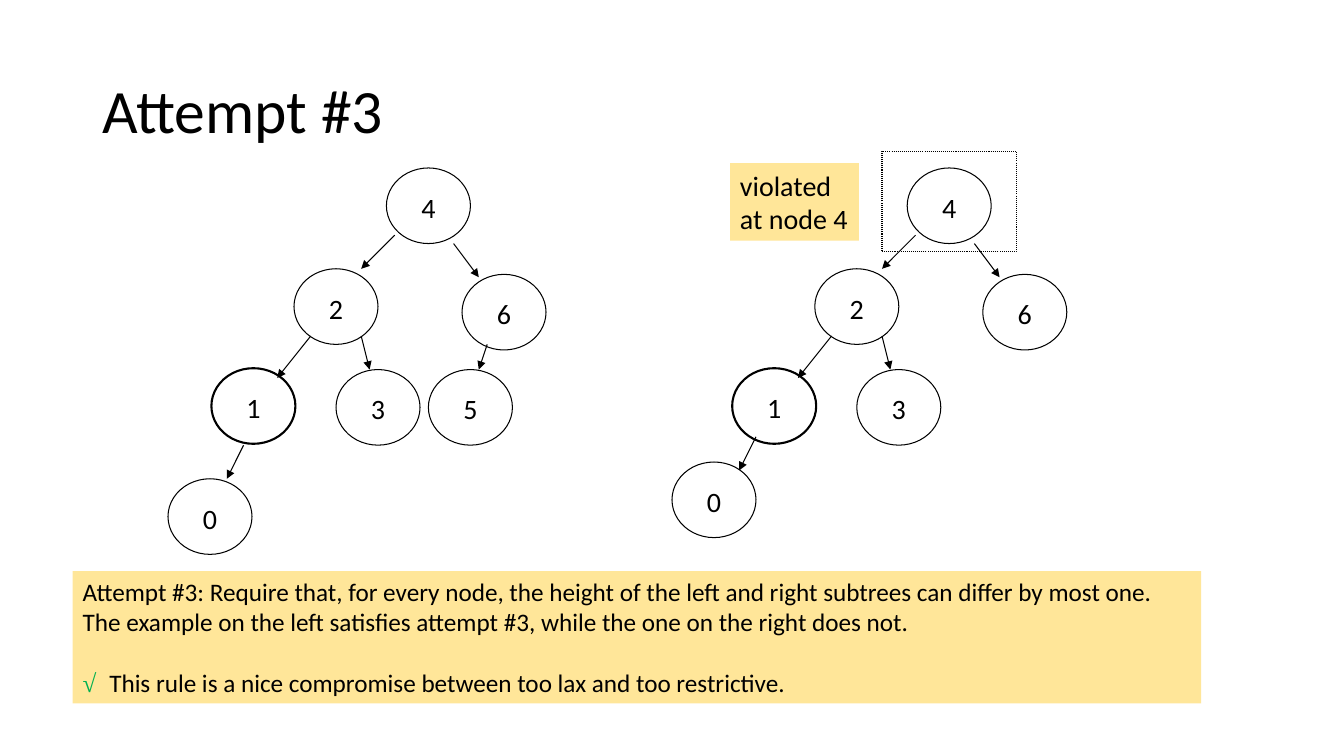
from lxml import etree
from pptx import Presentation
from pptx.dml.color import RGBColor
from pptx.enum.dml import MSO_LINE_DASH_STYLE as DASH
from pptx.enum.shapes import MSO_CONNECTOR, MSO_SHAPE as SHAPE
from pptx.enum.text import MSO_ANCHOR as ANCHOR, PP_ALIGN as ALIGN
from pptx.oxml.ns import qn
from pptx.util import Pt

BLACK, GREEN, YELLOW = "000000", "00B050", "FFE699"
NODE_W, NODE_H = 60, 54

SHARED_NODES = [
    ("4", 156, 0, 0.75),
    ("2", 90, 72, 0.75),
    ("6", 210, 76, 0.75),
    ("1", 31, 143, 1.5),
    ("3", 120, 144, 0.75),
]
SHARED_EDGES = [
    (162, 48, 138, 72),
    (204, 54, 222, 78),
    (102, 120, 78, 150),
    (138, 120, 144, 144),
]
LEFT_NODES = [("5", 186, 144, 0.75), ("0", 0, 222, 0.75)]
LEFT_EDGES = [(228, 126, 222, 144), (54, 198, 42, 222)]
RIGHT_NODES = [("0", -12, 210, 0.75)]
RIGHT_EDGES = [(48, 192, 36, 216)]


def rgb(color):
    """Turn a hex string into a colour."""
    return RGBColor.from_string(color)


def add_run(p, text, size, color=BLACK, font="Calibri"):
    """Append one formatted run to a paragraph."""
    r = p.add_run()
    r.text = text
    r.font.size = Pt(size)
    r.font.name = font
    r.font.color.rgb = rgb(color)


def add_box(s, kind, x, y, w, h, fill=None, line=None, width=0.75):
    """Draw a preset shape with optional fill and outline."""
    sp = s.shapes.add_shape(kind, Pt(x), Pt(y), Pt(w), Pt(h))
    sp.shadow.inherit = False
    if fill:
        sp.fill.solid()
        sp.fill.fore_color.rgb = rgb(fill)
    else:
        sp.fill.background()
    if line:
        sp.line.color.rgb = rgb(line)
        sp.line.width = Pt(width)
    else:
        sp.line.fill.background()
    return sp


def add_arrow(s, x1, y1, x2, y2):
    """Draw a thin black arrow."""
    line = s.shapes.add_connector(MSO_CONNECTOR.STRAIGHT, Pt(x1), Pt(y1), Pt(x2), Pt(y2))
    line.line.color.rgb = rgb(BLACK)
    line.line.width = Pt(0.75)
    etree.SubElement(line.line._get_or_add_ln(), qn("a:tailEnd"), type="triangle")
    etree.SubElement(line._element.spPr, qn("a:effectLst"))


def add_title(s, x, y, w, h):
    """Place the slide title."""
    tf = s.shapes.add_textbox(Pt(x), Pt(y), Pt(w), Pt(h)).text_frame
    tf.word_wrap = True
    tf.vertical_anchor = ANCHOR.MIDDLE
    p = tf.paragraphs[0]
    p.line_spacing = 0.9
    add_run(p, "Attempt #3", 44)


def add_tree(s, x, y, nodes, edges):
    """Draw a binary tree whose parts are offset from (x, y)."""
    for label, dx, dy, width in nodes:
        sp = add_box(s, SHAPE.OVAL, x + dx, y + dy, NODE_W, NODE_H, line=BLACK, width=width)
        tf = sp.text_frame
        tf.word_wrap = False
        tf.vertical_anchor = ANCHOR.MIDDLE
        tf.margin_top, tf.margin_bottom = Pt(2), Pt(0)
        p = tf.paragraphs[0]
        p.alignment = ALIGN.CENTER
        add_run(p, label, 20)
    for x1, y1, x2, y2 in edges:
        add_arrow(s, x + x1, y + y1, x + x2, y + y2)


def add_violation(s, x, y):
    """Frame the violating root and label it."""
    frame = add_box(s, SHAPE.RECTANGLE, x + 108.5, y - 8.5, 96, 72, line=BLACK)
    frame.line.dash_style = DASH.ROUND_DOT
    tf = add_box(s, SHAPE.RECTANGLE, x, y, 92, 55.5, fill=YELLOW).text_frame
    tf.word_wrap = False
    tf.vertical_anchor = ANCHOR.TOP
    for p, text in ((tf.paragraphs[0], "violated"), (tf.add_paragraph(), "at node 4")):
        p.alignment = ALIGN.LEFT
        add_run(p, text, 20)


def add_note(s, x, y, w, h):
    """Place the explanation of the rule."""
    tf = add_box(s, SHAPE.RECTANGLE, x, y, w, h, fill=YELLOW).text_frame
    tf.word_wrap = True
    tf.vertical_anchor = ANCHOR.TOP
    p = tf.paragraphs[0]
    p.alignment = ALIGN.LEFT
    add_run(p, "Attempt #3: Require that, for every node, the height of the left and right "
               "subtrees can differ by most one. The example on the left satisfies "
               "attempt #3, while the one on the right does not.", 18)
    p = tf.add_paragraph()
    p.alignment = ALIGN.LEFT
    p.space_before = Pt(22)
    pPr = p._p.get_or_add_pPr()
    pPr.set("marL", str(Pt(19)))
    pPr.set("indent", str(Pt(-19)))
    tabs = etree.SubElement(pPr, qn("a:tabLst"))
    etree.SubElement(tabs, qn("a:tab"), pos=str(Pt(19)), algn="l")
    add_run(p, "√\t", 18, GREEN, "Times New Roman")
    add_run(p, "This rule is a nice compromise between too lax and too restrictive.", 18)


def main():
    """Build and save the slide."""
    prs = Presentation()
    prs.slide_width, prs.slide_height = Pt(960), Pt(540)
    s = prs.slides.add_slide(prs.slide_layouts[6])
    add_title(s, 66, 28.75, 828, 104.4)
    add_tree(s, 120, 120, SHARED_NODES + LEFT_NODES, SHARED_EDGES + LEFT_EDGES)
    add_note(s, 52, 408, 806, 94.5)
    add_tree(s, 492, 120, SHARED_NODES + RIGHT_NODES, SHARED_EDGES + RIGHT_EDGES)
    add_violation(s, 521.5, 116.5)
    prs.save("out.pptx")


if __name__ == "__main__":
    main()
